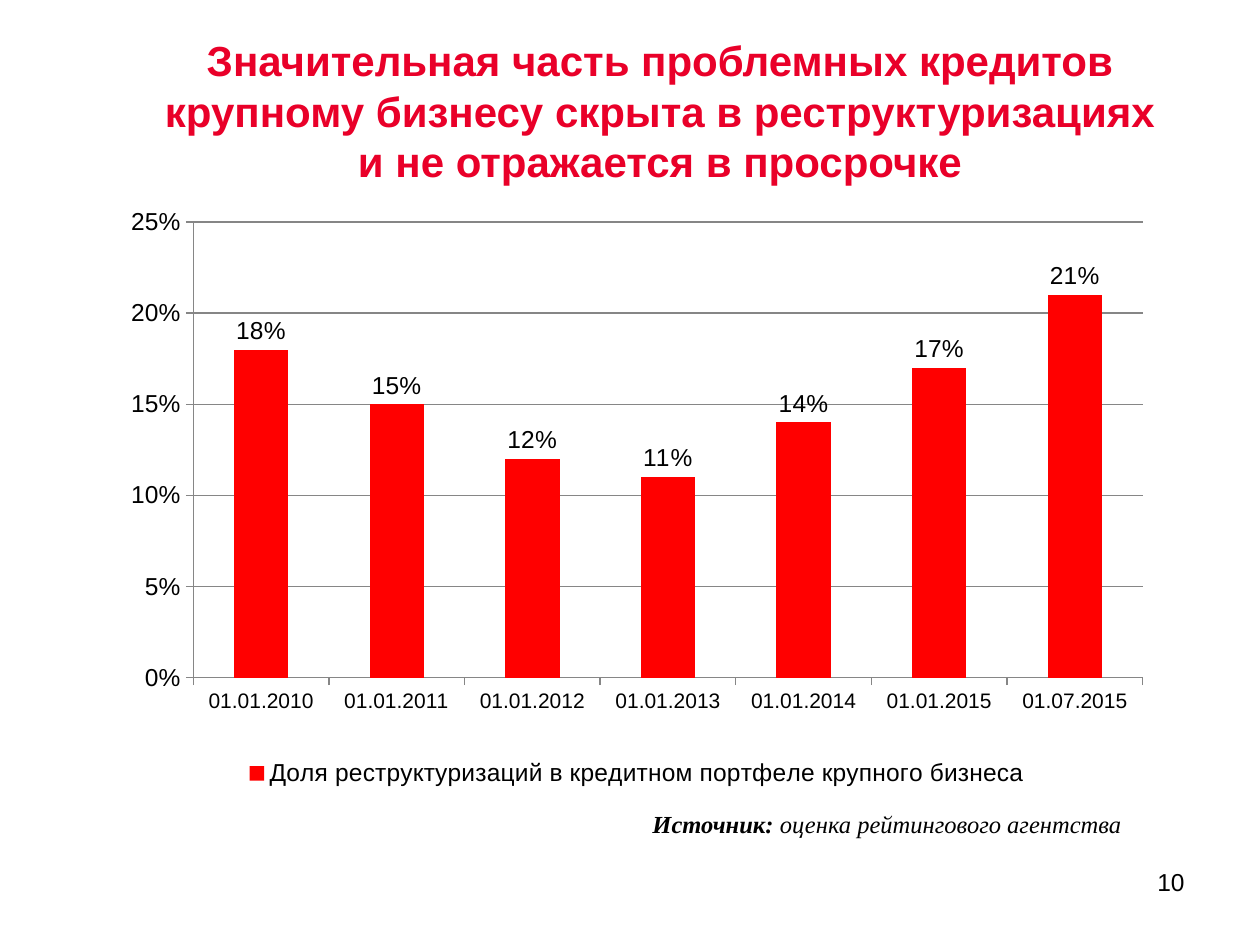
from lxml import etree
from pptx import Presentation
from pptx.chart.data import CategoryChartData
from pptx.dml.color import RGBColor
from pptx.enum.chart import XL_CHART_TYPE, XL_LABEL_POSITION, XL_LEGEND_POSITION, XL_TICK_MARK
from pptx.enum.text import MSO_ANCHOR, PP_ALIGN
from pptx.oxml.ns import qn
from pptx.util import Emu, Pt

COLUMNS = XL_CHART_TYPE.COLUMN_CLUSTERED
ABOVE = XL_LABEL_POSITION.OUTSIDE_END
BOTTOM = XL_LEGEND_POSITION.BOTTOM
TICK_OUT, TICK_NONE = XL_TICK_MARK.OUTSIDE, XL_TICK_MARK.NONE
TOP, MIDDLE = MSO_ANCHOR.TOP, MSO_ANCHOR.MIDDLE
LEFT, CENTER, RIGHT = PP_ALIGN.LEFT, PP_ALIGN.CENTER, PP_ALIGN.RIGHT

COLORS = {"title": "E90029", "bar": "FF0000", "text": "000000", "grid": "868686"}
SANS, SERIF = "Arial", "Times New Roman"
EMU_PER_PX = 914400 / 126

RESTRUCTURED_SHARE = {
    "01.01.2010": 0.18,
    "01.01.2011": 0.15,
    "01.01.2012": 0.12,
    "01.01.2013": 0.11,
    "01.01.2014": 0.14,
    "01.01.2015": 0.17,
    "01.07.2015": 0.21,
}


def px(length):
    return Emu(round(length * EMU_PER_PX))


def rgb(name):
    return RGBColor.from_string(COLORS[name])


def set_font(font, size, color="text", face=SANS, bold=False, italic=False):
    font.name, font.size = face, Pt(size)
    font.bold, font.italic = bold, italic
    font.color.rgb = rgb(color)


def set_layout(element, index, box, inner=False):
    """Place a chart part by fractions of the chart: x, y, width, height."""
    for old in element.findall(qn("c:layout")):
        element.remove(old)
    layout = etree.Element(qn("c:layout"))
    manual = etree.SubElement(layout, qn("c:manualLayout"))
    settings = [("layoutTarget", "inner")] if inner else []
    settings += [("xMode", "edge"), ("yMode", "edge")]
    settings += zip("xywh", map(str, box))
    for tag, value in settings:
        etree.SubElement(manual, qn(f"c:{tag}")).set("val", value)
    element.insert(index, layout)


class SlideBuilder:
    def __init__(self, slide):
        self.slide = slide

    def text(self, text, box, size, align=LEFT, anchor=TOP, lead="", **style):
        """Add one paragraph, with an optional bold lead before the text."""
        frame = self.slide.shapes.add_textbox(*map(px, box)).text_frame
        frame.word_wrap = True
        frame.vertical_anchor = anchor
        paragraph = frame.paragraphs[0]
        paragraph.alignment = align
        if lead:
            run = paragraph.add_run()
            run.text = lead
            set_font(run.font, size, **{**style, "bold": True})
        run = paragraph.add_run()
        run.text = text
        set_font(run.font, size, **style)

    def axis(self, axis, size):
        axis.major_tick_mark, axis.minor_tick_mark = TICK_OUT, TICK_NONE
        self.hairline(axis.format.line)
        set_font(axis.tick_labels.font, size)

    def hairline(self, line):
        line.color.rgb = rgb("grid")
        line.width = Pt(0.75)

    def column_chart(self, name, values, box, plot, legend):
        data = CategoryChartData(number_format="0%")
        data.categories = list(values)
        data.add_series(name, list(values.values()))
        chart = self.slide.shapes.add_chart(COLUMNS, *map(px, box), data).chart
        chart.has_title = False
        set_font(chart.font, 10)

        self.axis(chart.category_axis, 12)
        share_axis = chart.value_axis
        self.axis(share_axis, 14)
        share_axis.minimum_scale, share_axis.maximum_scale = 0, 0.25
        share_axis.major_unit = 0.05
        share_axis.tick_labels.number_format = "0%"
        share_axis.tick_labels.number_format_is_linked = False
        self.hairline(share_axis.major_gridlines.format.line)

        columns = chart.plots[0]
        columns.gap_width = 150
        columns.vary_by_categories = False
        fill = columns.series[0].format.fill
        fill.solid()
        fill.fore_color.rgb = rgb("bar")
        columns.has_data_labels = True
        labels = columns.data_labels
        labels.show_value = True
        labels.number_format, labels.number_format_is_linked = "0%", False
        labels.position = ABOVE
        set_font(labels.font, 14)

        chart.has_legend = True
        chart.legend.position = BOTTOM
        chart.legend.include_in_layout = False
        set_font(chart.legend.font, 14)
        set_layout(chart.legend._element, 1, legend)
        set_layout(chart._chartSpace.chart.plotArea, 0, plot, inner=True)


def main():
    deck = Presentation()
    deck.slide_width, deck.slide_height = px(1260), px(945)
    builder = SlideBuilder(deck.slides.add_slide(deck.slide_layouts[6]))
    builder.text(
        "Значительная часть проблемных кредитов крупному бизнесу скрыта "
        "в реструктуризациях и не отражается в просрочке",
        (144, 66, 1032, 89), 24, align=CENTER, anchor=MIDDLE, color="title", bold=True)
    builder.text("10", (903, 861, 294, 66), 14, align=RIGHT)
    builder.column_chart(
        "Доля реструктуризаций в кредитном портфеле крупного бизнеса",
        RESTRUCTURED_SHARE, (131, 199, 1065, 621),
        plot=(0.058, 0.037, 0.892, 0.734), legend=(0.1, 0.89, 0.75, 0.07))
    builder.text("оценка рейтингового агентства", (640, 803, 814, 43), 14,
                 lead="Источник: ", face=SERIF, italic=True)
    deck.save("out.pptx")


if __name__ == "__main__":
    main()
